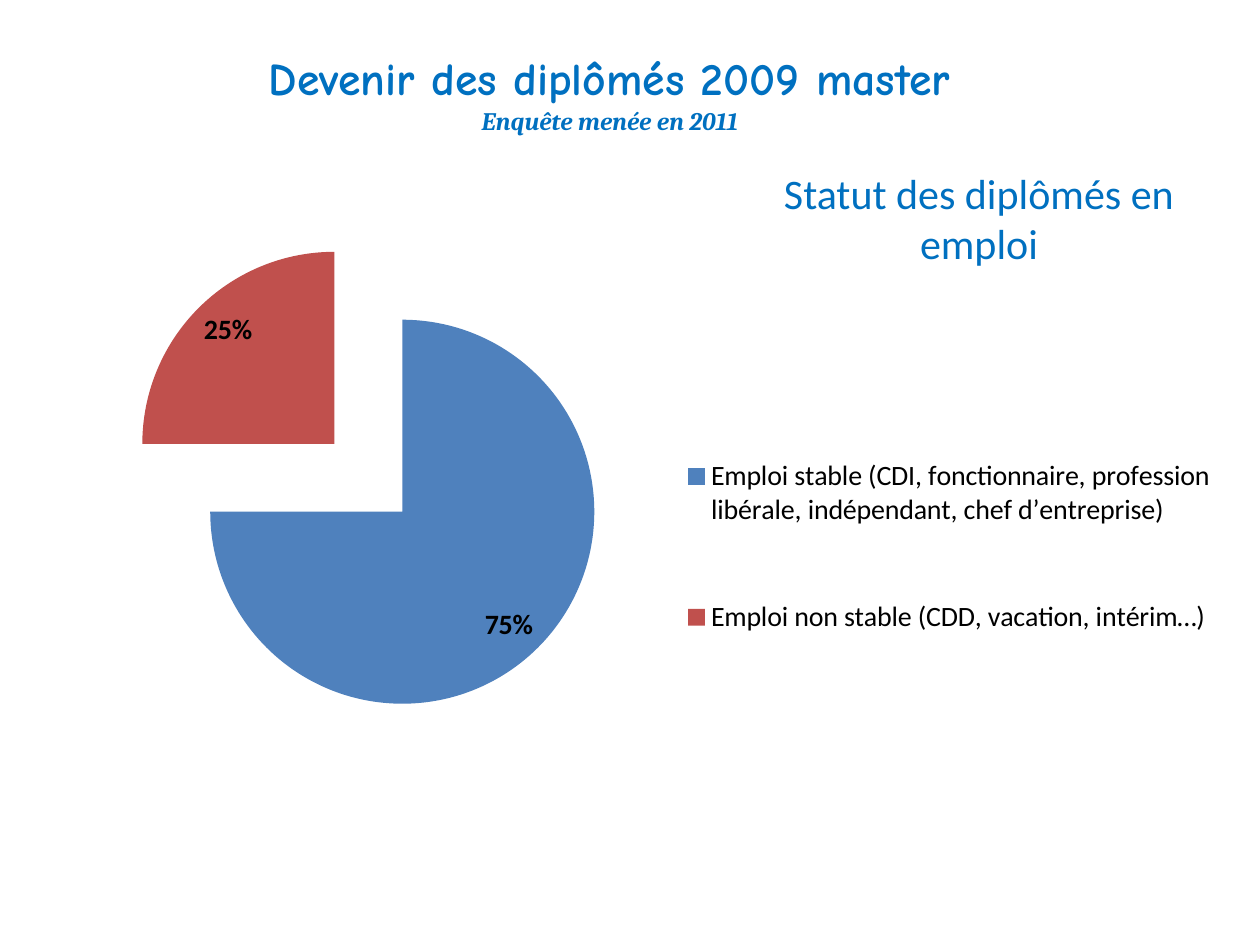
from dataclasses import dataclass

from lxml import etree
from pptx import Presentation
from pptx import util as u
from pptx.chart.data import CategoryChartData
from pptx.dml.color import RGBColor
from pptx.enum import chart as ch, text
from pptx.oxml import ns

WIDE, HIGH = 10, 7.5


@dataclass(frozen=True)
class Theme:
    blue: str = "0070C0"
    black: str = "000000"
    slices: tuple = ("4F81BD", "C0504D")
    head: float = 26.1
    sub: float = 14.4
    topic: float = 24
    label: float = 16


THEME = Theme()

STATUS = {
    "Emploi stable (CDI, fonctionnaire, profession libérale, "
    "indépendant, chef d’entreprise)": 75,
    "Emploi non stable (CDD, vacation, intérim…)": 25,
}


def area(left, top, wide, high):
    """Turn shares of the slide's size into lengths."""
    return [u.Inches(round(share * side, 2)) for share, side in
            zip((left, top, wide, high), (WIDE, HIGH) * 2)]


def style(item, **values):
    for name, value in values.items():
        setattr(item, name, value)


def ink(font, color, size, **values):
    font.color.rgb = RGBColor.from_string(color)
    style(font, size=u.Pt(size), **values)


def write(frame, lines):
    """Write lines of (words, size, font values) in one centred paragraph."""
    para = frame.paragraphs[0]
    para.alignment = text.PP_ALIGN.CENTER
    for i, (words, size, values) in enumerate(lines):
        if i:
            para.add_line_break()
        run = para.add_run()
        run.text = words
        ink(run.font, THEME.blue, size, **values)


def add_title(slide, box, lines):
    title = slide.shapes.title
    style(title, **dict(zip(("left", "top", "width", "height"), box)))
    style(title.text_frame, word_wrap=True,
          vertical_anchor=text.MSO_ANCHOR.MIDDLE,
          auto_size=text.MSO_AUTO_SIZE.NONE,
          margin_bottom=u.Inches(0.48))
    write(title.text_frame, lines)


def add_topic(slide, box, words):
    frame = slide.shapes.add_textbox(*box).text_frame
    style(frame, word_wrap=True,
          auto_size=text.MSO_AUTO_SIZE.SHAPE_TO_FIT_TEXT)
    write(frame, [(words, THEME.topic, {"name": "Calibri"})])


def set_layout(parent, after, shares, inner=False):
    """Place a chart part by shares of the chart's size."""
    for old in parent.findall(ns.qn("c:layout")):
        parent.remove(old)
    layout = etree.Element(ns.qn("c:layout"))
    manual = etree.SubElement(layout, ns.qn("c:manualLayout"))
    parts = [("layoutTarget", "inner")] if inner else []
    parts += [("xMode", "edge"), ("yMode", "edge"), *zip("xywh", shares)]
    for tag, value in parts:
        etree.SubElement(manual, ns.qn("c:" + tag)).set("val", str(value))
    if after is None:
        parent.insert(0, layout)
    else:
        after.addnext(layout)


def add_pie(slide, box, values):
    data = CategoryChartData(number_format="0")
    data.categories = list(values)
    data.add_series("Series 1", list(values.values()))
    chart = slide.shapes.add_chart(ch.XL_CHART_TYPE.PIE, *box, data).chart
    style(chart, has_title=False, has_legend=True)
    ink(chart.font, THEME.black, 10, name="Calibri")

    # Legend
    legend = chart.legend
    style(legend, position=ch.XL_LEGEND_POSITION.RIGHT,
          include_in_layout=False)
    ink(legend.font, THEME.black, THEME.label, name="Calibri")
    root = chart.element
    key = root.find(".//" + ns.qn("c:legend"))
    set_layout(key, key.find(ns.qn("c:legendPos")), (0.55, 0.29, 0.45, 0.58))
    set_layout(root.find(".//" + ns.qn("c:plotArea")), None,
               (0, 0.02, 0.58, 0.87), inner=True)

    # Slices, pulled apart
    plot = chart.plots[0]
    plot.vary_by_categories = True
    series = plot.series[0]
    for i, color in enumerate(THEME.slices):
        fill = series.points[i].format.fill
        fill.solid()
        fill.fore_color.rgb = RGBColor.from_string(color)
    pull = etree.Element(ns.qn("c:explosion"), val="25")
    series._element.find(ns.qn("c:dPt")).addprevious(pull)

    # Percent labels
    labels = series.data_labels
    style(labels, show_percentage=True, show_value=False,
          number_format="0%", number_format_is_linked=False,
          position=ch.XL_LABEL_POSITION.INSIDE_END)
    ink(labels.font, THEME.black, THEME.label, bold=True, name="Calibri")


def main():
    deck = Presentation()
    style(deck, slide_width=u.Inches(WIDE), slide_height=u.Inches(HIGH))
    slide = deck.slides.add_slide(deck.slide_layouts[5])
    add_title(slide, area(0.035, 0.052, 0.898, 0.15), [
        ("Devenir des diplômés 2009 master", THEME.head,
         {"name": "Comic Neue", "bold": True}),
        ("Enquête menée en 2011", THEME.sub,
         {"name": "Cambria", "bold": True, "italic": True}),
    ])
    add_topic(slide, area(0.578, 0.17, 0.398, 0.12),
              "Statut des diplômés en emploi")
    add_pie(slide, area(0.016, 0.24, 0.953, 0.584), STATUS)
    deck.save("out.pptx")


if __name__ == "__main__":
    main()
